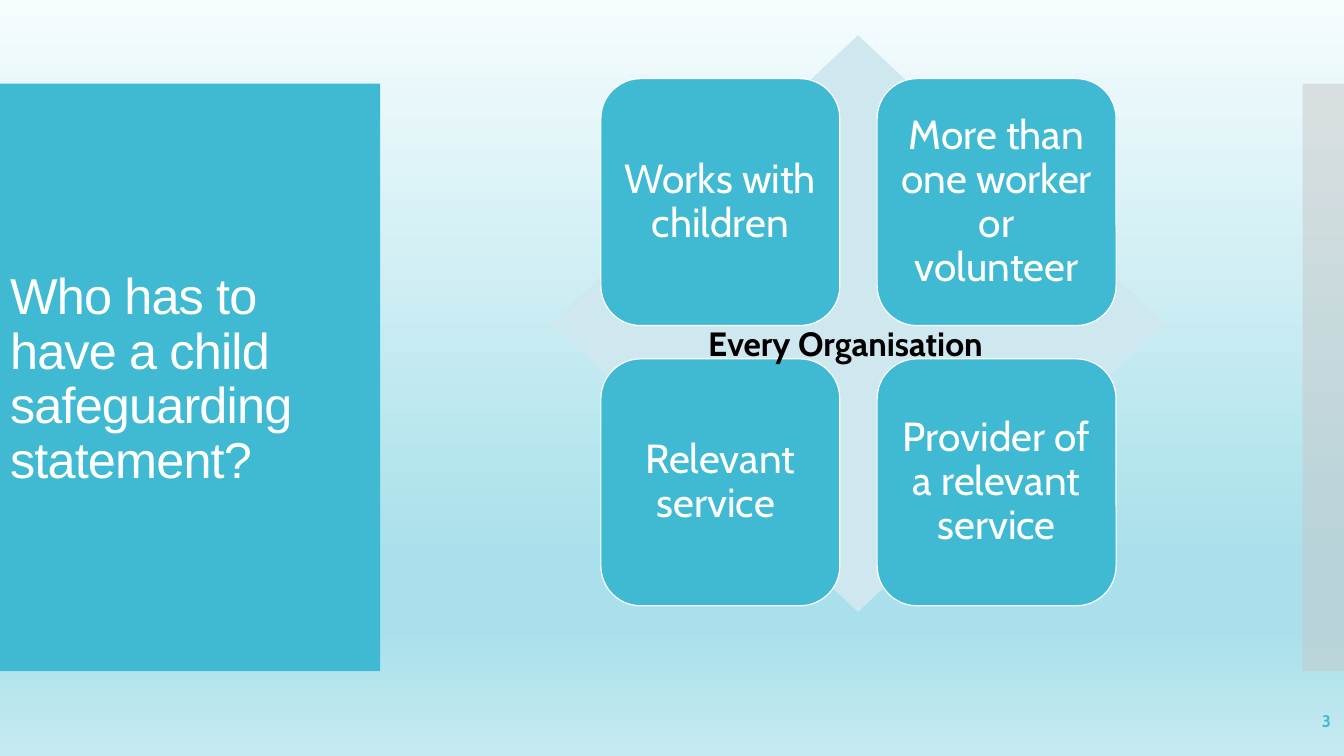
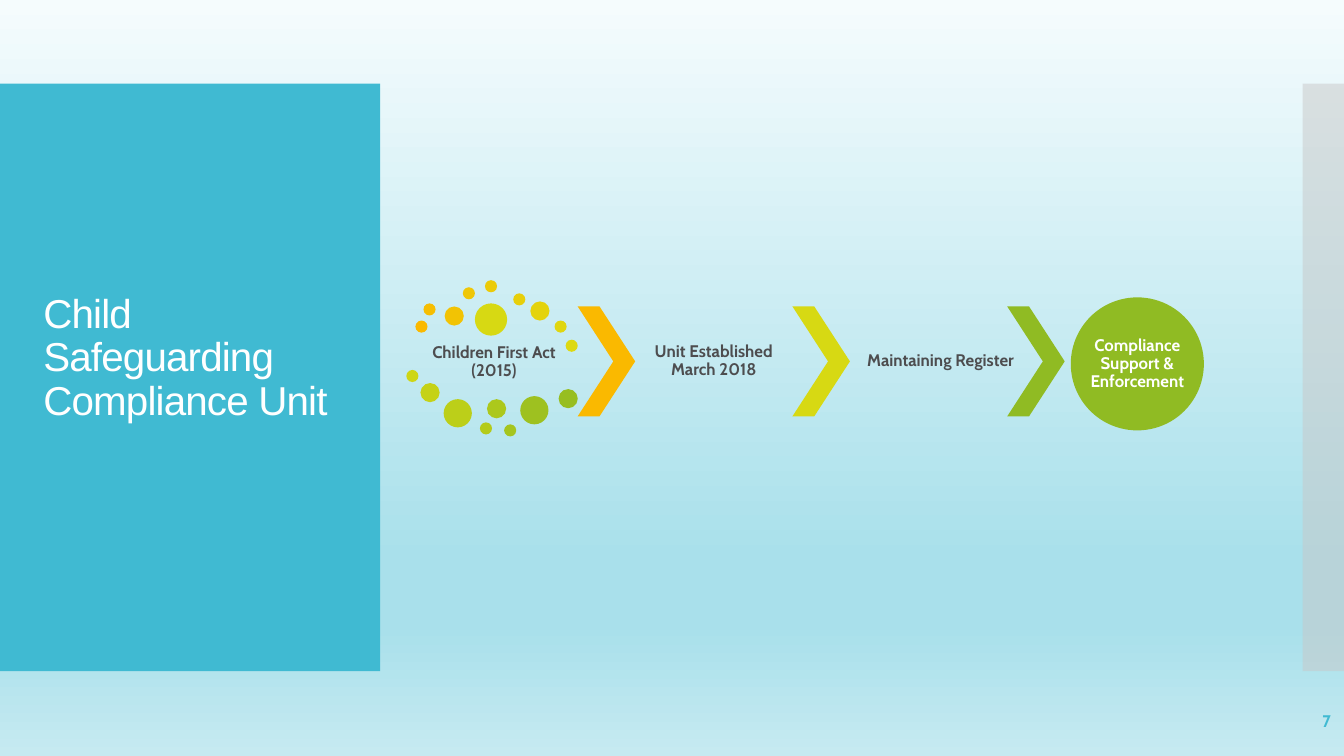
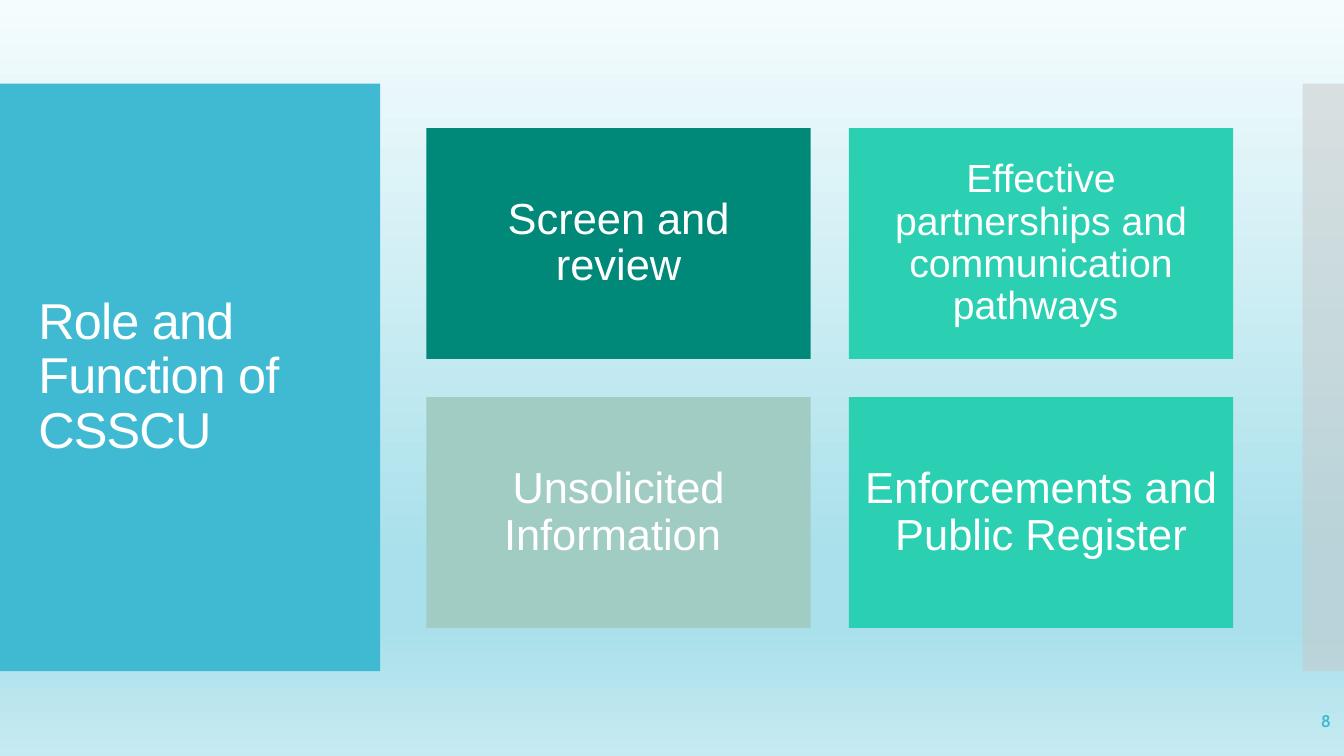
"""Build three child safeguarding slides."""
from colorsys import hls_to_rgb, rgb_to_hls
from copy import deepcopy

from lxml.etree import SubElement
from pptx import Presentation
from pptx.dml.color import RGBColor
from pptx.enum.shapes import MSO_SHAPE
from pptx.enum.text import MSO_ANCHOR, MSO_AUTO_SIZE, PP_ALIGN
from pptx.oxml.ns import qn
from pptx.util import Inches, Pt

BLUE = RGBColor(0x40, 0xBA, 0xD2)
PALE = RGBColor(0xCF, 0xE7, 0xEE)
GREY = RGBColor(0xC8, 0xC8, 0xC8)
DARK = RGBColor(0x4D, 0x4D, 0x4F)
WHITE = RGBColor(0xFF, 0xFF, 0xFF)
BLACK = RGBColor(0, 0, 0)
TEAL = RGBColor(0x00, 0x89, 0x78)
MINT = RGBColor(0x2B, 0xD0, 0xB3)
SAGE = RGBColor(0xA1, 0xCC, 0xC3)
GOLD = RGBColor(0xFA, 0xB9, 0x00)
LIME = RGBColor(0xD7, 0xD9, 0x13)
LEAF = RGBColor(0x90, 0xBB, 0x23)
SKY = [
    (0, RGBColor(0xF5, 0xFC, 0xFD)),
    (0.74, RGBColor(0xA9, 0xE0, 0xEB)),
    (0.83, RGBColor(0xA9, 0xE0, 0xEB)),
    (1, RGBColor(0xC6, 0xEA, 0xF1)),
]

TITLE = {"name": "Arial", "bold": False}
CARD = {"name": "Cabin", "size": Pt(29)}
TILE = {"name": "Arial", "size": Pt(31)}
STEP = {"name": "Cabin", "size": Pt(12), "bold": True}
MARK = {"name": "Cabin", "size": Pt(24), "bold": True}

DOTS = [
    (4.12, 3.18, 0.12), (4.2, 3.01, 0.12), (4.41, 3.04, 0.19),
    (4.59, 2.85, 0.12), (4.81, 2.78, 0.12), (5.09, 2.91, 0.12),
    (5.26, 2.99, 0.19), (5.5, 3.18, 0.12), (5.61, 3.37, 0.12),
    (4.71, 3.01, 0.32), (4.03, 3.67, 0.12), (4.17, 3.8, 0.19),
    (4.4, 3.96, 0.28), (4.76, 4.19, 0.12), (4.83, 3.96, 0.19),
    (5, 4.21, 0.12), (5.16, 3.93, 0.28), (5.54, 3.86, 0.19),
]


def apply(item, values):
    """Set each named value on an item."""
    for key, value in values.items():
        setattr(item, key, value)


def place(box):
    """Turn a box in inches into lengths."""
    return [Inches(side) for side in box]


def write(shape, text, font, color, align=PP_ALIGN.CENTER, inset=None,
          anchor=MSO_ANCHOR.MIDDLE, lead=0.9):
    """Fill a shape with one formatted paragraph."""
    frame = shape.text_frame
    apply(frame, {"text": text, "word_wrap": True, "vertical_anchor": anchor,
                  "auto_size": MSO_AUTO_SIZE.NONE})
    if inset is not None:
        sides = ("left", "top", "right", "bottom")
        apply(frame, {f"margin_{side}": Inches(inset) for side in sides})
    line = frame.paragraphs[0]
    apply(line, {"alignment": align, "line_spacing": lead})
    run = line.runs[0]
    apply(run.font, font)
    run.font.color.rgb = color
    return run


def draw(shapes, kind, box, fill, edge=None):
    """Add a flat shape with an optional edge."""
    shape = shapes.add_shape(kind, *place(box))
    shape.shadow.inherit = False
    shape.fill.solid()
    shape.fill.fore_color.rgb = fill
    if edge is None:
        shape.line.fill.background()
    else:
        shape.line.color.rgb = edge
        shape.line.width = Pt(0.85)
    return shape


def label(slide, box, text, font, color, **rest):
    """Add a text box."""
    return write(slide.shapes.add_textbox(*place(box)), text, font, color, **rest)


def paint(layout):
    """Give the layout its sky gradient."""
    fill = layout.background.fill
    fill.gradient()
    fill.gradient_angle = 270
    stops = layout.background._cSld.find(".//" + qn("a:gsLst"))
    for _ in range(len(SKY) - len(stops)):
        stops.append(deepcopy(stops[0]))
    for stop, (spot, color) in zip(fill.gradient_stops, SKY):
        stop.position = spot
        stop.color.rgb = color


def band(slide, layout):
    """Put the side bands on the layout."""
    main = draw(slide.shapes, MSO_SHAPE.RECTANGLE, (0, 0.83, 3.77, 5.83), BLUE)
    edge = draw(slide.shapes, MSO_SHAPE.RECTANGLE, (12.92, 0.83, 0.42, 5.83), GREY)
    tint = edge._element.spPr.find(".//" + qn("a:srgbClr"))
    SubElement(tint, qn("a:alpha"), val="50000")
    for spot, shape in enumerate((main, edge)):
        shape._element.nvSpPr.cNvPr.set("id", str(90 + spot))
        layout.shapes._spTree.insert(2 + spot, shape._element)


def start(deck, layout, title, size, box, page):
    """Add a slide with its title and page number."""
    slide = deck.slides.add_slide(layout)
    head = slide.shapes.title
    apply(head, dict(zip(("left", "top", "width", "height"), place(box))))
    run = write(head, title, TITLE | {"size": Pt(size)}, WHITE, PP_ALIGN.LEFT)
    run.font._element.set("spc", "-60")
    label(slide, (11.63, 6.95, 1.67, 0.4), page, STEP, BLUE,
          align=PP_ALIGN.RIGHT, lead=1)
    return slide


def grid(slide, kind, box, pitch, cells, font, inset, edge=None):
    """Lay out labelled shapes in two columns."""
    left, top, width, height = box
    for spot, (text, fill, change) in enumerate(cells):
        row, col = divmod(spot, 2)
        area = (left + col * pitch[0], top + row * pitch[1], width, height)
        shape = draw(slide.shapes, kind, area, fill, edge)
        write(shape, text, font | change, WHITE, inset=inset)


def blend(spot):
    """Mix gold, lime and leaf along the dots."""
    turn, step = divmod(spot, 9)
    ends = [rgb_to_hls(*(part / 255 for part in color))
            for color in (GOLD, LIME, LEAF)[turn:turn + 2]]
    mix = [a + (b - a) * step / 9 for a, b in zip(*ends)]
    return RGBColor(*(round(part * 255) for part in hls_to_rgb(*mix)))


def need(slide):
    """Draw the four tests for an organisation."""
    draw(slide.shapes, MSO_SHAPE.DIAMOND, (5.47, 0.35, 6.08, 5.72), PALE)
    names = ("Works with children", "More than one worker or volunteer",
             "Relevant service ", "Provider of a relevant service")
    grid(slide, MSO_SHAPE.ROUNDED_RECTANGLE, (5.96, 0.78, 2.37, 2.45),
         (2.74, 2.78), [(name, BLUE, {}) for name in names], CARD, 0.11, WHITE)
    label(slide, (6.74, 3.15, 3.29, 0.5), "Every Organisation", MARK, BLACK,
          anchor=MSO_ANCHOR.TOP, lead=1)


def flow(slide):
    """Draw the path from the act to enforcement."""
    group = slide.shapes.add_group_shape()
    for spot, (left, top, size) in enumerate(DOTS):
        draw(group.shapes, MSO_SHAPE.OVAL, (left, top, size, size), blend(spot))
    steps = [
        ((4.12, 3.34, 1.56, 0.51), "Children First Act (2015)", 5.73, GOLD),
        ((6.3, 3.04, 1.56, 1.09), "Unit Established March 2018", 7.86, LIME),
        ((8.55, 3.04, 1.56, 1.09), "Maintaining Register", 9.99, LEAF),
    ]
    for box, text, left, fill in steps:
        label(slide, box, text, STEP, DARK, inset=0.02)
        arrow = draw(slide.shapes, MSO_SHAPE.CHEVRON, (left, 3.04, 0.57, 1.09), fill)
        arrow.adjustments[0] = 0.62
    goal = draw(slide.shapes, MSO_SHAPE.OVAL, (10.62, 2.95, 1.32, 1.32), LEAF)
    write(goal, "Compliance Support & Enforcement ", STEP, WHITE, inset=0)


def role(slide):
    """Draw the four tasks of the unit."""
    cells = [
        ("Screen and review", TEAL, {}),
        ("Effective partnerships and communication pathways ", MINT,
         {"size": Pt(28)}),
        ("Unsolicited Information ", SAGE, {}),
        ("Enforcements and Public Register", MINT, {}),
    ]
    grid(slide, MSO_SHAPE.RECTANGLE, (4.23, 1.27, 3.81, 2.29), (4.19, 2.67),
         cells, TILE, 0.13)


def main():
    """Build and save the deck."""
    deck = Presentation()
    apply(deck, {"slide_width": Inches(13.33), "slide_height": Inches(7.5)})
    layout = deck.slide_layouts.get_by_name("Title Only")
    paint(layout)
    first = start(deck, layout, "Who has to have a child safeguarding statement?",
                  36, (0, 0.7, 3.74, 6.14), "3")
    band(first, layout)
    need(first)
    flow(start(deck, layout, "Child Safeguarding Compliance Unit",
               28.8, (0.33, 2.4, 3.02, 2.32), "7"))
    role(start(deck, layout, "Role and Function of CSSCU",
               36, (0.28, 1.23, 3.22, 5.03), "8"))
    deck.save("out.pptx")


if __name__ == "__main__":
    main()
